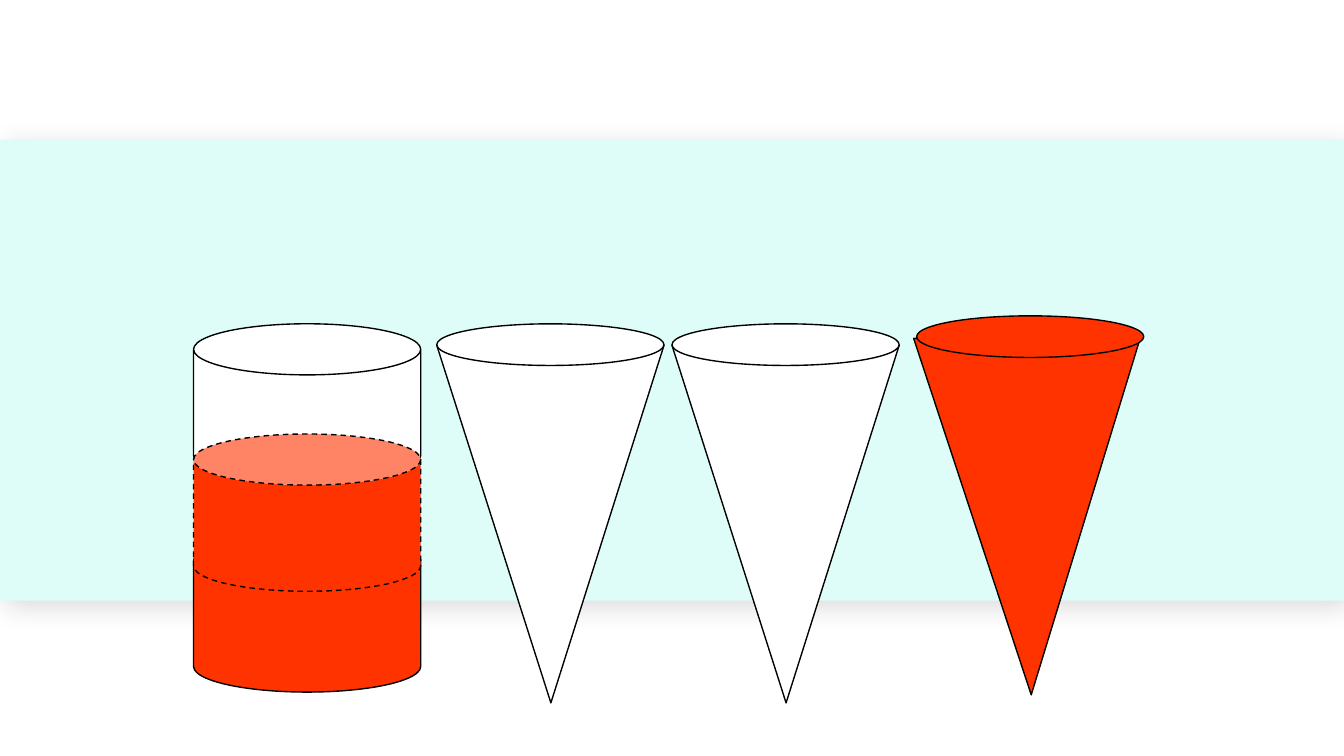
import pptx
import pptx.util
import pptx.dml.color
import pptx.enum.dml
import pptx.enum.shapes
import pptx.oxml
import pptx.oxml.ns

Inches = pptx.util.Inches
Shape = pptx.enum.shapes.MSO_SHAPE
Dash = pptx.enum.dml.MSO_LINE

COLORS = {"band": "DEFDF8", "liquid": "FF3300", "empty": "FFFFFF", "outline": "000000"}
OUTLINE = {"width": pptx.util.Pt(0.75)}
DASHED = {**OUTLINE, "dash_style": Dash.DASH}
VESSEL_WIDTH = 1.69
CAN_HEIGHT = 1.17
CONE_HEIGHT = 2.66
RIM_HEIGHT = 0.31


class VolumeSlide:
    def __init__(self, slide, colors):
        self.slide = slide
        self.colors = colors

    def rgb(self, color):
        return pptx.dml.color.RGBColor.from_string(self.colors[color])

    def solid(self, parent, preset, box, color, line_format=None):
        solid = parent.shapes.add_shape(preset, *map(Inches, box))
        solid.shadow.inherit = False
        solid.fill.solid()
        solid.fill.fore_color.rgb = self.rgb(color)
        if line_format is None:
            solid.line.fill.background()
        else:
            solid.line.color.rgb = self.rgb("outline")
            for attribute, value in line_format.items():
                setattr(solid.line, attribute, value)
        return solid

    def band(self, box):
        band = self.solid(self.slide, Shape.RECTANGLE, box, "band")
        effects = band.element.spPr.find(pptx.oxml.ns.qn("a:effectLst"))
        effects.append(pptx.oxml.parse_xml(
            f'<a:outerShdw {pptx.oxml.ns.nsdecls("a")} blurRad="{pptx.util.Pt(15)}" '
            f'dist="{pptx.util.Pt(5)}" dir="2700000" algn="tl" rotWithShape="0">'
            f'<a:srgbClr val="{self.colors["outline"]}"><a:alpha val="15000"/></a:srgbClr>'
            '</a:outerShdw>'))

    def cone(self, left, top, color, rotation=180, point=0.498, shift=0):
        cone = self.slide.shapes.add_group_shape()
        body = self.solid(cone, Shape.ISOSCELES_TRIANGLE,
                          (left + shift, top + 0.16, VESSEL_WIDTH, CONE_HEIGHT), color, OUTLINE)
        body.rotation = rotation
        body.adjustments[0] = point
        self.solid(cone, Shape.OVAL, (left, top, VESSEL_WIDTH, RIM_HEIGHT), color, OUTLINE)

    def cylinder(self, left, sections):
        cylinder = self.slide.shapes.add_group_shape()
        for top, color, line_format in sections:
            section = self.solid(cylinder, Shape.CAN, (left, top, VESSEL_WIDTH, CAN_HEIGHT),
                                 color, line_format)
            section.adjustments[0] = 0.325


def main():
    presentation = pptx.Presentation()
    presentation.slide_width = Inches(10)
    presentation.slide_height = presentation.slide_width * 9 // 16
    volumes = VolumeSlide(presentation.slides.add_slide(presentation.slide_layouts[6]), COLORS)
    volumes.band((0, 1.04, 10, 3.43))
    volumes.cone(6.82, 2.35, "liquid", rotation=179.5, point=0.496, shift=-0.01)
    for left in (3.25, 5):
        volumes.cone(left, 2.41, "empty")
    volumes.cylinder(1.44, [
        (2.41, "empty", OUTLINE),
        (3.98, "liquid", OUTLINE),
        (3.23, "liquid", DASHED),
    ])
    presentation.save("out.pptx")


if __name__ == "__main__":
    main()
